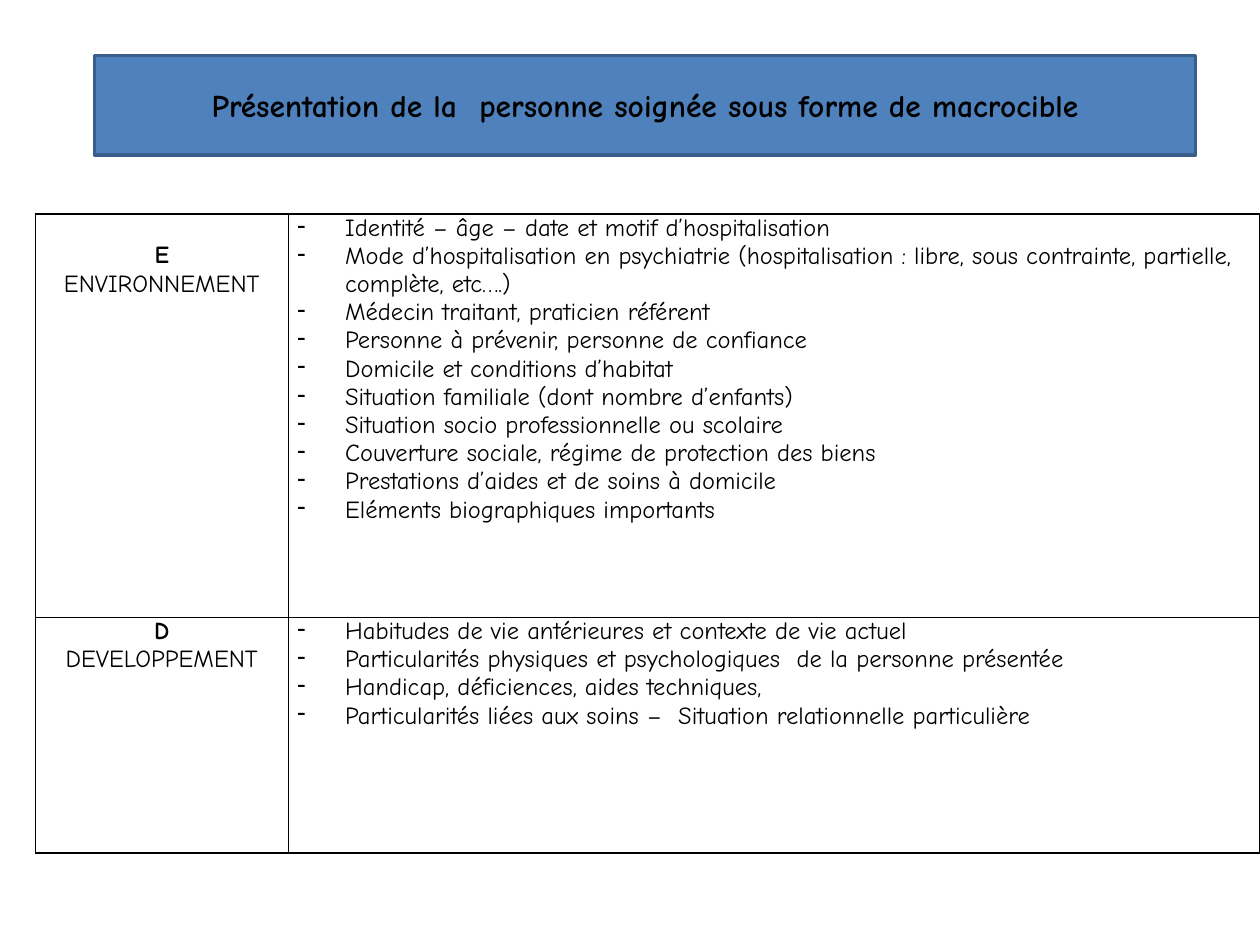
"""Build the slide presenting a patient as a macrocible."""
import dataclasses

import lxml.etree
import pptx
import pptx.dml.color
import pptx.enum.shapes
import pptx.enum.text
import pptx.oxml
import pptx.oxml.ns
import pptx.table
import pptx.text.text
import pptx.util

Inches = pptx.util.Inches
Pt = pptx.util.Pt
qn = pptx.oxml.ns.qn

COLORS = {"text": "000000", "banner": "4F81BD", "banner_edge": "3A5F8C", "grid": "000000"}
FONT = "Comic Neue"
TITLE = "Présentation de la  personne soignée sous forme de macrocible"
COLUMN_WIDTHS = (2.01, 7.71)
HANGING = Inches(0.38)


@dataclasses.dataclass(frozen=True)
class Section:
    letter: str
    name: str
    height: float
    label_offset: float
    topics: tuple[str, ...]


SECTIONS = (
    Section("E", "ENVIRONNEMENT", 3.2, 0.22, (
        "Identité – âge – date et motif d’hospitalisation",
        "Mode d’hospitalisation en psychiatrie (hospitalisation : libre, sous contrainte, partielle, complète, etc….)",
        "Médecin traitant, praticien référent",
        "Personne à prévenir, personne de confiance",
        "Domicile et conditions d’habitat",
        "Situation familiale (dont nombre d’enfants)",
        "Situation socio professionnelle ou scolaire",
        "Couverture sociale, régime de protection des biens",
        "Prestations d’aides et de soins à domicile",
        "Eléments biographiques importants",
    )),
    Section("D", "DEVELOPPEMENT", 1.87, 0, (
        "Habitudes de vie antérieures et contexte de vie actuel",
        "Particularités physiques et psychologiques  de la personne présentée",
        "Handicap, déficiences, aides techniques,",
        "Particularités liées aux soins –  Situation relationnelle particulière",
    )),
)


def rgb(role: str) -> pptx.dml.color.RGBColor:
    """Return the colour of a role."""
    return pptx.dml.color.RGBColor.from_string(COLORS[role])


def style_text(paragraph: pptx.text.text._Paragraph, size: int, bold: bool = False) -> None:
    """Set the font of a whole paragraph."""
    font = paragraph.font
    font.name, font.size, font.bold = FONT, Pt(size), bold
    font.color.rgb = rgb("text")


def add_dash(paragraph: pptx.text.text._Paragraph) -> None:
    """Give a paragraph a hanging dash bullet."""
    properties = paragraph._p.get_or_add_pPr()
    properties.set("marL", str(HANGING))
    properties.set("indent", str(-HANGING))
    lxml.etree.SubElement(properties, qn("a:buChar"), char="-")


def prepare_cell(cell: pptx.table._Cell, top: float = 0) -> None:
    """Set the margins, borders and empty fill of a cell."""
    cell.margin_left = cell.margin_right = Inches(0.07)
    cell.margin_top, cell.margin_bottom = Inches(top), 0
    properties = cell._tc.get_or_add_tcPr()
    for side in ("a:lnL", "a:lnR", "a:lnT", "a:lnB"):
        border = lxml.etree.SubElement(properties, qn(side), w=str(Pt(1)))
        fill = lxml.etree.SubElement(border, qn("a:solidFill"))
        lxml.etree.SubElement(fill, qn("a:srgbClr"), val=COLORS["grid"])
    cell.fill.background()


def fill_section(table: pptx.table.Table, row: int, section: Section) -> None:
    """Write one section into its table row."""
    table.rows[row].height = Inches(section.height)
    label, details = table.cell(row, 0), table.cell(row, 1)
    prepare_cell(label, section.label_offset)
    prepare_cell(details)
    label.text = f"{section.letter}\n{section.name}"
    for paragraph, bold in zip(label.text_frame.paragraphs, (True, False)):
        paragraph.alignment = pptx.enum.text.PP_ALIGN.CENTER
        style_text(paragraph, 14, bold)
    details.text = "\n".join(section.topics)
    for paragraph in details.text_frame.paragraphs:
        add_dash(paragraph)
        style_text(paragraph, 14)


def add_banner(slide: pptx.slide.Slide) -> None:
    """Draw the title banner."""
    banner = slide.shapes.add_shape(
        pptx.enum.shapes.MSO_SHAPE.RECTANGLE,
        Inches(0.75), Inches(0.44), Inches(8.74), Inches(0.79))
    banner.shadow.inherit = False
    banner.fill.solid()
    banner.fill.fore_color.rgb = rgb("banner")
    banner.line.color.rgb = rgb("banner_edge")
    banner.line.width = Pt(2)
    frame = banner.text_frame
    frame.word_wrap = True
    frame.vertical_anchor = pptx.enum.text.MSO_ANCHOR.MIDDLE
    frame.text = TITLE
    frame.paragraphs[0].alignment = pptx.enum.text.PP_ALIGN.CENTER
    style_text(frame.paragraphs[0], 18, True)


def add_sections(slide: pptx.slide.Slide) -> None:
    """Draw the table of sections."""
    table = slide.shapes.add_table(
        len(SECTIONS), len(COLUMN_WIDTHS), Inches(0.28), Inches(1.7),
        Inches(sum(COLUMN_WIDTHS)), Inches(sum(section.height for section in SECTIONS))).table
    table.first_row = table.horz_banding = False
    for column, width in zip(table.columns, COLUMN_WIDTHS):
        column.width = Inches(width)
    for row, section in enumerate(SECTIONS):
        fill_section(table, row, section)


def main() -> None:
    """Build and save the presentation."""
    presentation = pptx.Presentation()
    presentation.slide_width, presentation.slide_height = Inches(10), Inches(7.5)
    slide = presentation.slides.add_slide(presentation.slide_layouts[6])
    add_sections(slide)
    add_banner(slide)
    presentation.save("out.pptx")


if __name__ == "__main__":
    main()
